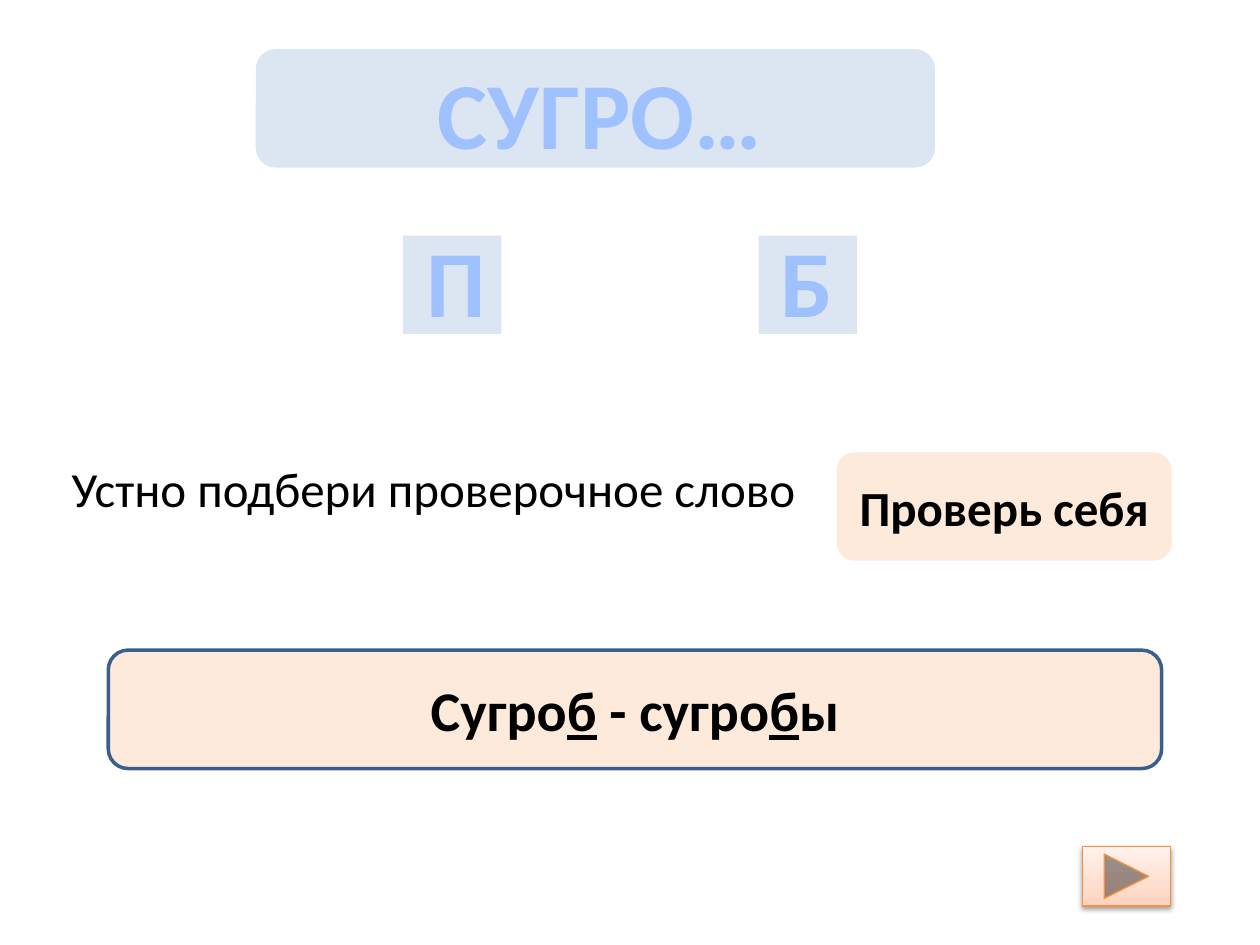
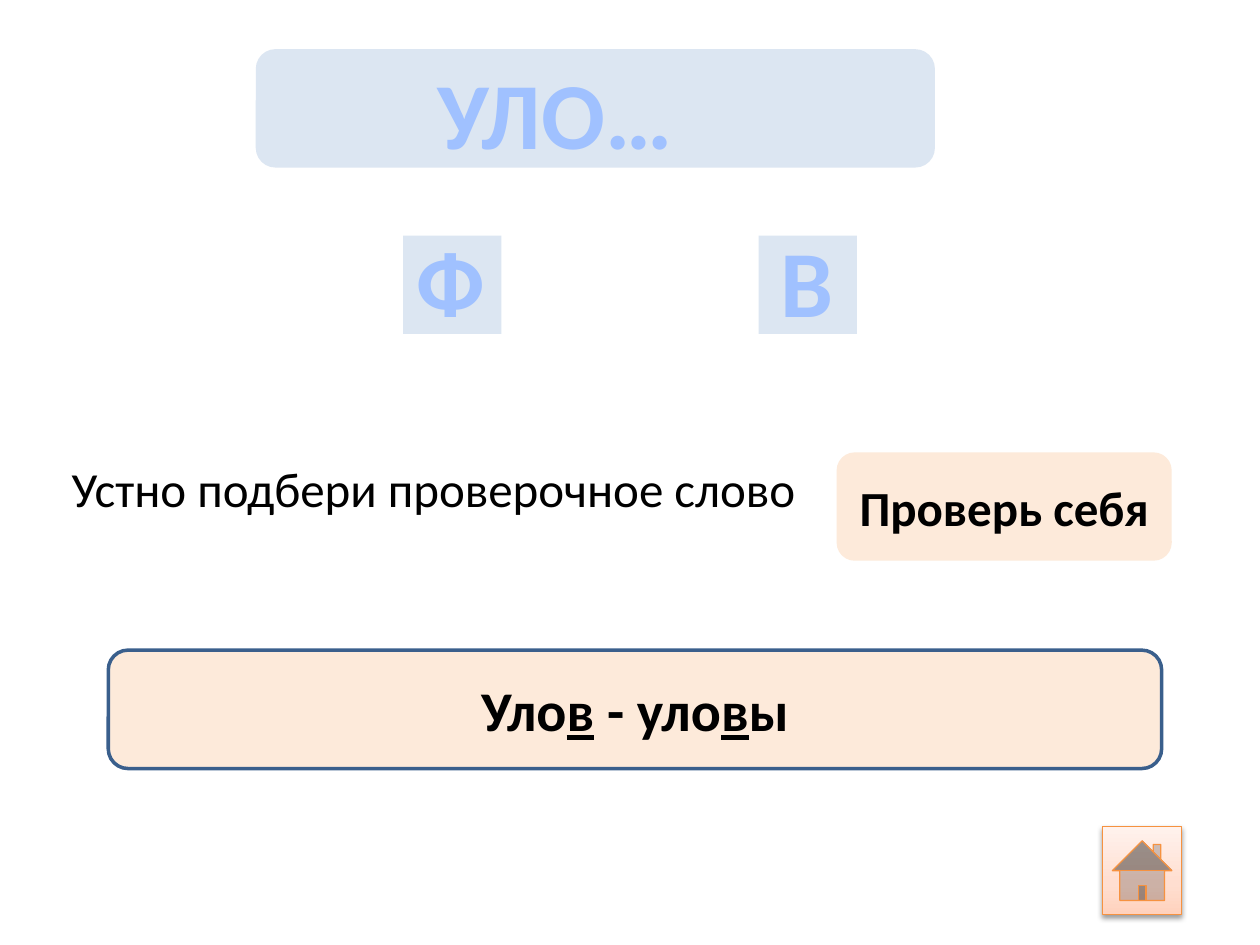
"""Build two spelling exercise slides: pick the missing letter, then check yourself."""
import copy

import lxml.etree
import pptx
import pptx.dml.color
import pptx.enum.shapes
import pptx.enum.text
import pptx.oxml
import pptx.oxml.ns
import pptx.util

Pt = pptx.util.Pt
RGB = pptx.dml.color.RGBColor.from_string
MSO = pptx.enum.shapes.MSO_SHAPE
PP = pptx.enum.text.PP_ALIGN
ANCHOR = pptx.enum.text.MSO_ANCHOR
qn = pptx.oxml.ns.qn
NS = pptx.oxml.ns.nsdecls("a")

COLORS = {
    "blue": "DCE6F2",
    "peach": "FDEADA",
    "frame": "3A5F8C",
    "text": "000000",
    "glyph_line": "467AB8",
    "button_line": "F69240",
}
GRADIENTS = {
    "glyph": (90, [(0, "BFD3F9"), (9, "A0C1FF"), (50, "003D85"), (79, "A0C1FF"), (100, "BFD3F9")]),
    "button": (270, [(0, "FFD2BD"), (35, "FFDED0"), (100, "FFF2ED")]),
}
FONT = "Calibri"

grads = {}
for name, (angle, stops) in GRADIENTS.items():
    gs = "".join(f'<a:gs pos="{pos * 1000}"><a:srgbClr val="{c}"/></a:gs>' for pos, c in stops)
    grads[name] = pptx.oxml.parse_xml(
        f'<a:gradFill {NS} rotWithShape="1"><a:gsLst>{gs}</a:gsLst>'
        f'<a:lin ang="{angle * 60000}" scaled="0"/></a:gradFill>')

glyph_line = pptx.oxml.parse_xml(
    f'<a:ln {NS} w="{Pt(0.83)}"><a:solidFill><a:srgbClr val="{COLORS["glyph_line"]}"/></a:solidFill></a:ln>')
button_shadow = pptx.oxml.parse_xml(
    f'<a:outerShdw {NS} blurRad="{Pt(3.1)}" dist="{Pt(1.6)}" dir="5400000" rotWithShape="0">'
    f'<a:srgbClr val="{COLORS["text"]}"><a:alpha val="38000"/></a:srgbClr></a:outerShdw>')

prs = pptx.Presentation()
prs.slide_width, prs.slide_height = pptx.util.Inches(10), pptx.util.Inches(7.5)


def add_box(s, kind, x, y, w, h, fill=None, line=None, weight=2):
    """Place a shape, or a text box if kind is None, in percent of the slide."""
    at = [int(v * side / 100) for v, side in
          zip((x, y, w, h), (prs.slide_width, prs.slide_height) * 2)]
    if kind is None:
        return s.shapes.add_textbox(*at)
    sp = s.shapes.add_shape(kind, *at)
    sp.shadow.inherit = False
    if fill:
        sp.fill.solid()
        sp.fill.fore_color.rgb = RGB(COLORS[fill])
    if line:
        sp.line.color.rgb = RGB(COLORS[line])
        sp.line.width = Pt(weight)
    else:
        sp.line.fill.background()
    return sp


def add_text(sp, runs, size, bold=True, align=PP.CENTER, glyph=False):
    """Write runs in one paragraph; every second run is underlined."""
    tf = sp.text_frame
    tf.word_wrap = not glyph
    p = tf.paragraphs[0]
    p.alignment = align
    for i, text in enumerate(runs):
        r = p.add_run()
        r.text = text
        if glyph:
            rPr = r._r.get_or_add_rPr()
            rPr.append(copy.deepcopy(glyph_line))
            rPr.append(copy.deepcopy(grads["glyph"]))
        else:
            r.font.color.rgb = RGB(COLORS["text"])
        r.font.name = FONT
        r.font.size = Pt(size)
        r.font.bold = bold
        if i % 2:
            r.font.underline = True


EXERCISES = [
    {"word": ("СУГРО…", 28),
     "letters": [("П", 32.8, 6.8), ("Б", 60.9, 6.2)],
     "answer": ["Сугро", "б", " - сугро", "б", "ы"],
     "button": (MSO.ACTION_BUTTON_FORWARD_OR_NEXT, 85.9, 89.6, 7, 6.27)},
    {"word": ("УЛО…", 20.9),
     "letters": [("Ф", 32, 7.5), ("В", 60.9, 6.3)],
     "answer": ["Уло", "в", " - уло", "в", "ы"],
     "button": (MSO.ACTION_BUTTON_HOME, 87.5, 87.47, 6.3, 9.33)},
]

for ex in EXERCISES:
    s = prs.slides.add_slide(prs.slide_layouts[6])

    add_box(s, MSO.ROUNDED_RECTANGLE, 20.3, 5.2, 53.9, 12.53, "blue")
    word, width = ex["word"]
    add_text(add_box(s, None, 33.6, 5.2, width, 13.47), [word], 54, glyph=True)

    for tile_x, (letter, x, width) in zip((32, 60.2), ex["letters"]):
        add_box(s, MSO.RECTANGLE, tile_x, 24.93, 7.8, 10.4, "blue")
        add_text(add_box(s, None, x, 22.93, width, 13.47), [letter], 54, glyph=True)

    task = add_box(s, None, 4.7, 47.87, 60.9, 7.6)
    add_text(task, ["Устно подбери проверочное слово"], 28, bold=False, align=PP.LEFT)

    check = add_box(s, MSO.ROUNDED_RECTANGLE, 66.4, 47.87, 26.6, 11.47, "peach")
    answer = add_box(s, MSO.ROUNDED_RECTANGLE, 8.6, 68.8, 83.6, 12.53, "peach", "frame")
    for sp, runs, size in ((check, ["Проверь себя"], 28), (answer, ex["answer"], 32)):
        sp.text_frame.vertical_anchor = ANCHOR.MIDDLE
        add_text(sp, runs, size)

    button = add_box(s, *ex["button"], line="button_line", weight=0.75)
    button.fill.gradient()
    spPr = button._element.spPr
    spPr.replace(spPr.find(qn("a:gradFill")), copy.deepcopy(grads["button"]))
    spPr.find(qn("a:effectLst")).append(copy.deepcopy(button_shadow))

prs.save("out.pptx")
